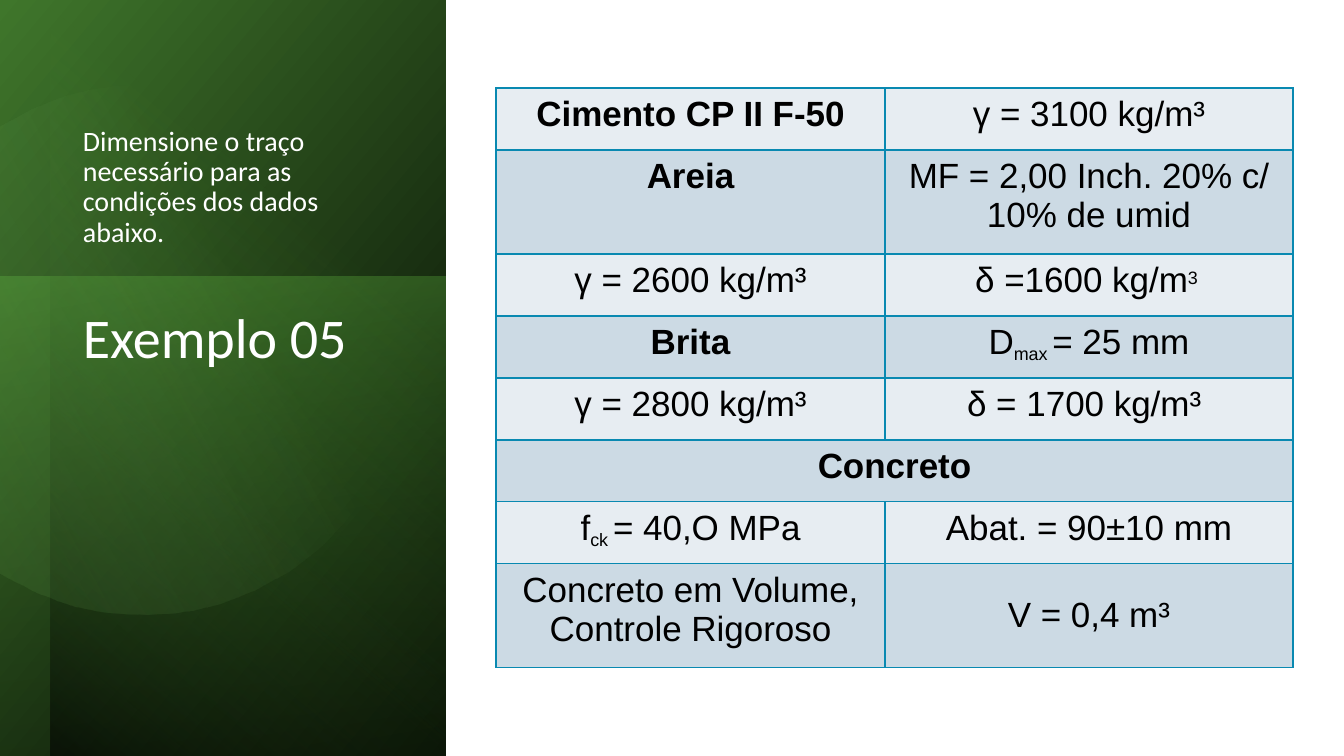
"""Build the slide: a green panel with a title beside a table of mix data."""
from dataclasses import dataclass
from math import cos, radians, sin
from typing import Any

from lxml.etree import SubElement
from pptx import Presentation
from pptx.dml.color import RGBColor
from pptx.enum.shapes import MSO_SHAPE
from pptx.enum.text import MSO_ANCHOR, PP_ALIGN
from pptx.oxml.ns import qn
from pptx.util import Emu, Pt

SCALE = 914400 / 100.8


@dataclass(frozen=True)
class Theme:
    """Colours, fonts and type sizes."""
    white: str = "FFFFFF"
    black: str = "000000"
    leaf: str = "549E39"
    moss: str = "3F762B"
    pine: str = "2A4F1C"
    lime: str = "93D07D"
    light: str = "E7EDF2"
    dark: str = "CCDAE4"
    edge: str = "0989B1"
    head: str = "Calibri"
    body: str = "Arial"
    title: int = 40
    lead: int = 20
    cell: int = 25
    small: int = 22


THEME = Theme()


@dataclass(frozen=True)
class Box:
    """A place in px."""
    left: int
    top: int
    width: int
    height: int


@dataclass(frozen=True)
class Stop:
    """One gradient stop, with place and alpha in percent."""
    place: int
    color: str
    alpha: int = 100


@dataclass(frozen=True)
class Wash:
    """A turned rectangle with a gradient."""
    box: Box
    turn: int
    flip: bool
    stops: tuple[Stop, Stop]
    angle: int


@dataclass(frozen=True)
class Label:
    """A text box with one line of copy."""
    box: Box
    text: str
    size: int
    anchor: MSO_ANCHOR


@dataclass(frozen=True)
class Part:
    """A run of cell text; base is its shift in percent."""
    text: str
    bold: bool = False
    base: int = 0


@dataclass(frozen=True)
class Row:
    """A table row; a single cell spans all columns."""
    height: int
    cells: tuple[tuple[Part, ...], ...]


WASHES = (
    Wash(Box(-156, 156, 758, 446), 90, True,
         (Stop(0, THEME.black), Stop(100, THEME.moss)), 310),
    Wash(Box(-17, 293, 480, 446), 270, False,
         (Stop(0, THEME.leaf, 50), Stop(100, THEME.pine, 0)), 190),
    Wash(Box(-130, 180, 756, 395), 270, True,
         (Stop(0, THEME.black, 59), Stop(69, THEME.leaf, 0)), 220),
)
GLOW = (Stop(39, THEME.lime, 0), Stop(100, THEME.moss, 26))
LABELS = (
    Label(Box(73, 305, 318, 339), "Exemplo 05", THEME.title, MSO_ANCHOR.TOP),
    Label(Box(73, 89, 322, 164),
          "Dimensione o traço necessário para as condições dos dados abaixo.",
          THEME.lead, MSO_ANCHOR.BOTTOM),
)
GRID = Box(496, 88, 797, 580)
COLS = (389, 408)
LOW, TALL = 62, 104
ROWS = (
    Row(LOW, ((Part("Cimento CP II F-50", True),), (Part("γ = 3100 kg/m³"),))),
    Row(TALL, ((Part("Areia", True),),
               (Part("MF = 2,00 Inch. 20% c/ 10% de umid"),))),
    Row(LOW, ((Part("γ = 2600 kg/m³"),),
              (Part("δ =1600 kg/m"), Part("3 ", base=25)))),
    Row(LOW, ((Part("Brita", True),),
              (Part("D"), Part("max ", base=-21), Part("= 25 mm")))),
    Row(LOW, ((Part("γ = 2800 kg/m³"),), (Part("δ = 1700 kg/m³ "),))),
    Row(LOW, ((Part("Concreto", True),),)),
    Row(LOW, ((Part("f"), Part("ck ", base=-21), Part("= 40,O MPa")),
              (Part("Abat. = 90±10 mm"),))),
    Row(TALL, ((Part("Concreto em Volume, Controle Rigoroso"),),
               (Part("V = 0,4 m³"),))),
)


def px(num: float) -> Emu:
    """Turn px into EMU."""
    return Emu(round(num * SCALE))


def span(box: Box) -> tuple[Emu, Emu, Emu, Emu]:
    """Give a box in EMU."""
    return px(box.left), px(box.top), px(box.width), px(box.height)


def style(item: Any, form: dict[str, Any]) -> None:
    """Set each format value on an item."""
    for name, value in form.items():
        setattr(item, name, value)


def write(para: Any, part: Part, size: int, font: str, color: str) -> None:
    """Add one run to a paragraph."""
    run = para.add_run()
    run.text = part.text
    style(run.font, {"size": Pt(size), "name": font, "bold": part.bold})
    run.font.color.rgb = RGBColor.from_string(color)
    if part.base:
        run.font._element.set("baseline", str(part.base * 1000))


def shade(shape: Any, stops: tuple[Stop, Stop], angle: int) -> None:
    """Fill a shape with a gradient and no outline."""
    shape.shadow.inherit = False
    shape.line.fill.background()
    shape.fill.gradient()
    shape.fill.gradient_angle = angle
    for mark, stop in zip(shape.fill.gradient_stops, stops):
        mark.position = stop.place / 100
        mark.color.rgb = RGBColor.from_string(stop.color)
    tints = shape._element.spPr.iter(qn("a:srgbClr"))
    for tint, stop in zip(list(tints), stops):
        SubElement(tint, qn("a:alpha"), val=str(stop.alpha * 1000))


def draw_wash(slide: Any, wash: Wash) -> None:
    """Draw one panel layer."""
    shape = slide.shapes.add_shape(MSO_SHAPE.RECTANGLE, *span(wash.box))
    shape.rotation = wash.turn
    if wash.flip:
        shape._element.spPr.find(qn("a:xfrm")).set("flipH", "1")
    shade(shape, wash.stops, wash.angle)


def draw_disc(slide: Any) -> None:
    """Draw the round glow, cut flat at the slide's edge."""
    rad, turn, cut = 265, 101.6, 123
    turns = [radians(deg - turn) for deg in range(-cut, cut + 1, 2)]
    dots = [(rad + rad * cos(arc), rad + rad * sin(arc)) for arc in turns]
    pen = slide.shapes.build_freeform(*dots[0], scale=SCALE)
    pen.add_line_segments(dots[1:], close=True)
    shape = pen.convert_to_shape()
    style(shape, {"left": px(-83), "top": px(132), "rotation": turn})
    shade(shape, GLOW, 310)


def draw_label(slide: Any, label: Label) -> None:
    """Draw one text box."""
    frame = slide.shapes.add_textbox(*span(label.box)).text_frame
    style(frame, {"word_wrap": True, "vertical_anchor": label.anchor})
    para = frame.paragraphs[0]
    para.line_spacing = 0.9
    write(para, Part(label.text), label.size, THEME.head, THEME.white)


def edge(cell: Any) -> None:
    """Line all four sides of a cell."""
    props = cell._tc.get_or_add_tcPr()
    for spot, side in enumerate(("lnL", "lnR", "lnT", "lnB")):
        line = props.makeelement(qn(f"a:{side}"), {"w": str(Pt(1))})
        fill = SubElement(line, qn("a:solidFill"))
        SubElement(fill, qn("a:srgbClr"), val=THEME.edge)
        props.insert(spot, line)


def draw_grid(slide: Any) -> None:
    """Draw the table of mix data."""
    table = slide.shapes.add_table(len(ROWS), len(COLS), *span(GRID)).table
    style(table, {"first_row": False, "horz_banding": False})
    form = {"margin_left": px(14), "margin_right": px(14),
            "margin_top": px(7), "margin_bottom": px(7)}
    for col, width in zip(table.columns, COLS):
        col.width = px(width)
    for at, row in enumerate(ROWS):
        table.rows[at].height = px(row.height)
        tint = THEME.dark if at % 2 else THEME.light
        for col in range(len(COLS)):
            cell = table.cell(at, col)
            style(cell, form)
            cell.fill.solid()
            cell.fill.fore_color.rgb = RGBColor.from_string(tint)
            edge(cell)
        if len(row.cells) == 1:
            table.cell(at, 0).merge(table.cell(at, len(COLS) - 1))
        for col, parts in enumerate(row.cells):
            para = table.cell(at, col).text_frame.paragraphs[0]
            para.alignment = PP_ALIGN.CENTER
            for part in parts:
                size = THEME.small if part.base else THEME.cell
                write(para, part, size, THEME.body, THEME.black)
    table.cell(len(ROWS) - 1, 1).vertical_anchor = MSO_ANCHOR.MIDDLE


def main() -> None:
    """Build and save the deck."""
    deck = Presentation()
    style(deck, {"slide_width": px(1344), "slide_height": px(756)})
    slide = deck.slides.add_slide(deck.slide_layouts[6])
    for wash in WASHES:
        draw_wash(slide, wash)
    draw_disc(slide)
    for label in LABELS:
        draw_label(slide, label)
    draw_grid(slide)
    deck.save("out.pptx")


if __name__ == "__main__":
    main()
